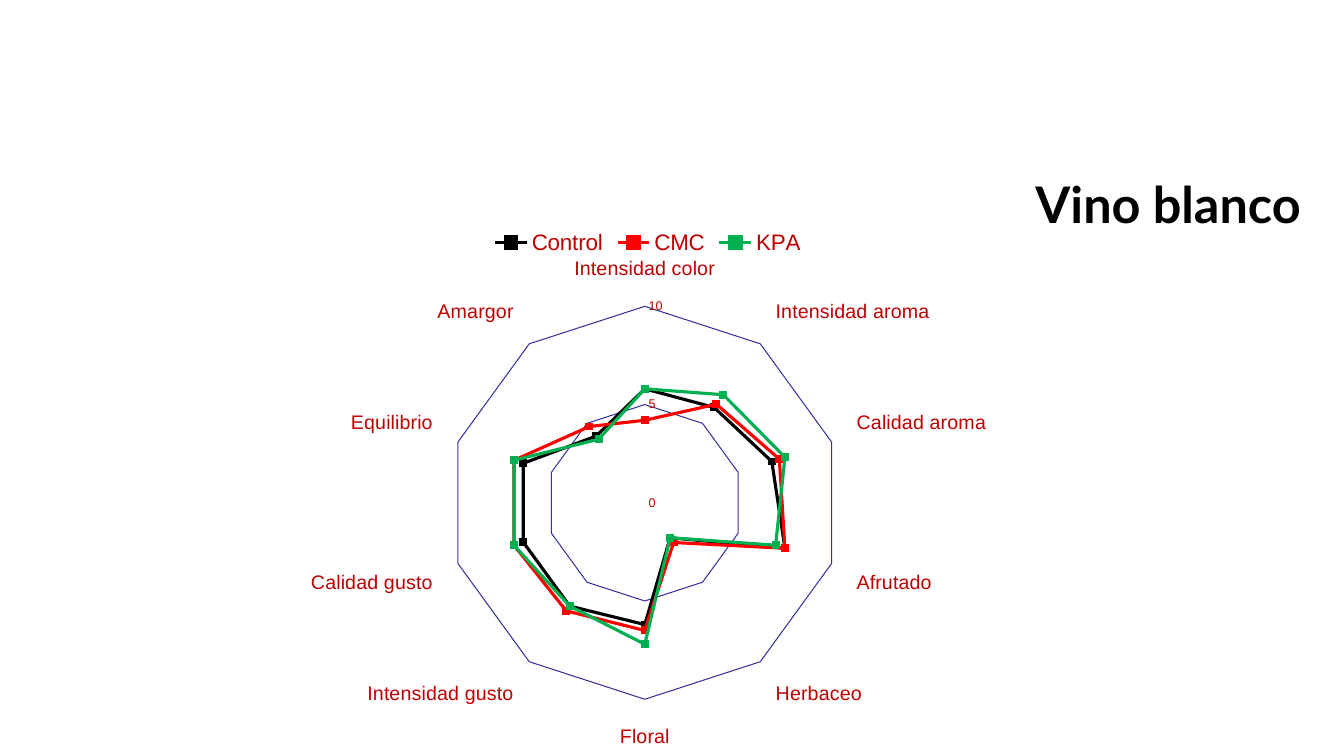
from lxml import etree
from pptx import Presentation
from pptx.chart.data import CategoryChartData
from pptx.dml.color import RGBColor
from pptx.enum import chart as kinds, text
from pptx.oxml import ns
from pptx.util import Inches, Pt

TITLE = "Vino blanco"
ATTRIBUTES = ["Intensidad color", "Intensidad aroma", "Calidad aroma", "Afrutado", "Herbaceo",
              "Floral", "Intensidad gusto", "Calidad gusto", "Equilibrio", "Amargor"]
SCORES = {
    "Control": [5.8, 6, 6.8, 7.5, 2.2, 6.2, 6.5, 6.5, 6.5, 4.2],
    "CMC": [4.2, 6.2, 7.2, 7.5, 2.5, 6.5, 6.8, 7, 7, 4.8],
    "KPA": [5.8, 6.8, 7.5, 7, 2.2, 7.2, 6.5, 7, 7, 4],
}
COLORS = {"Control": "000000", "CMC": "FF0000", "KPA": "00B050", "title": "000000",
          "label": "C00000", "grid": "333399", "axis": "D9D9D9"}
PLOT = {"x": 0.285, "y": 0.155, "w": 0.424, "h": 0.695}


def color(name):
    return RGBColor.from_string(COLORS[name])


def style_font(font, size, name="Arial", tint="label"):
    font.size = Pt(size)
    font.name = name
    font.color.rgb = color(tint)


def style_line(line, tint, width):
    line.color.rgb = color(tint)
    line.width = Pt(width)


def place_plot(chart):
    """Fix the inner plot area as fractions of the chart frame."""
    area = chart.element.find(".//" + ns.qn("c:plotArea"))
    for layout in area.findall(ns.qn("c:layout")):
        area.remove(layout)
    layout = etree.Element(ns.qn("c:layout"))
    area.insert(0, layout)
    manual = etree.SubElement(layout, ns.qn("c:manualLayout"))
    settings = {"layoutTarget": "inner", "xMode": "edge", "yMode": "edge", **PLOT}
    for tag, value in settings.items():
        etree.SubElement(manual, ns.qn("c:" + tag)).set("val", str(value))


def add_title(page):
    title = page.shapes.title
    title.left, title.top, title.width, title.height = map(Inches, (10.17, 1.66, 2.95, 0.71))
    frame = title.text_frame
    frame.text = TITLE
    frame.word_wrap = False
    frame.auto_size = text.MSO_AUTO_SIZE.SHAPE_TO_FIT_TEXT
    para = frame.paragraphs[0]
    para.alignment = text.PP_ALIGN.LEFT
    span = para.runs[0]
    style_font(span.font, 36, "Lato", "title")
    span.font.bold = True


def add_radar(page):
    data = CategoryChartData()
    data.categories = ATTRIBUTES
    for name, values in SCORES.items():
        data.add_series(name, values)
    chart = page.shapes.add_chart(kinds.XL_CHART_TYPE.RADAR_MARKERS, Inches(1.5), Inches(2.17),
                                  Inches(9.85), Inches(5.61), data).chart
    chart.has_title = False
    style_font(chart.font, 10)
    place_plot(chart)

    chart.has_legend = True
    chart.legend.position = kinds.XL_LEGEND_POSITION.TOP
    chart.legend.include_in_layout = False
    style_font(chart.legend.font, 16)

    for axis, size in ((chart.category_axis, 14), (chart.value_axis, 9)):
        axis.major_tick_mark = axis.minor_tick_mark = kinds.XL_TICK_MARK.NONE
        style_font(axis.tick_labels.font, size)
    chart.category_axis.has_major_gridlines = False
    style_line(chart.category_axis.format.line, "axis", 0.75)

    scale = chart.value_axis
    scale.minimum_scale, scale.maximum_scale, scale.major_unit = 0, 10, 5
    scale.tick_labels.number_format = "General"
    scale.tick_labels.number_format_is_linked = False
    scale.format.line.fill.background()
    scale.has_major_gridlines = True
    style_line(scale.major_gridlines.format.line, "grid", 0.75)

    for series in chart.plots[0].series:
        series.smooth = False
        style_line(series.format.line, series.name, 2.25)
        marker = series.marker
        marker.style = kinds.XL_MARKER_STYLE.SQUARE
        marker.size = 5
        marker.format.fill.solid()
        marker.format.fill.fore_color.rgb = color(series.name)
        marker.format.line.color.rgb = color(series.name)


def main():
    deck = Presentation()
    deck.slide_width, deck.slide_height = Inches(13.33), Inches(7.5)
    page = deck.slides.add_slide(deck.slide_layouts.get_by_name("Title Only"))
    add_title(page)
    add_radar(page)
    deck.save("out.pptx")


if __name__ == "__main__":
    main()
